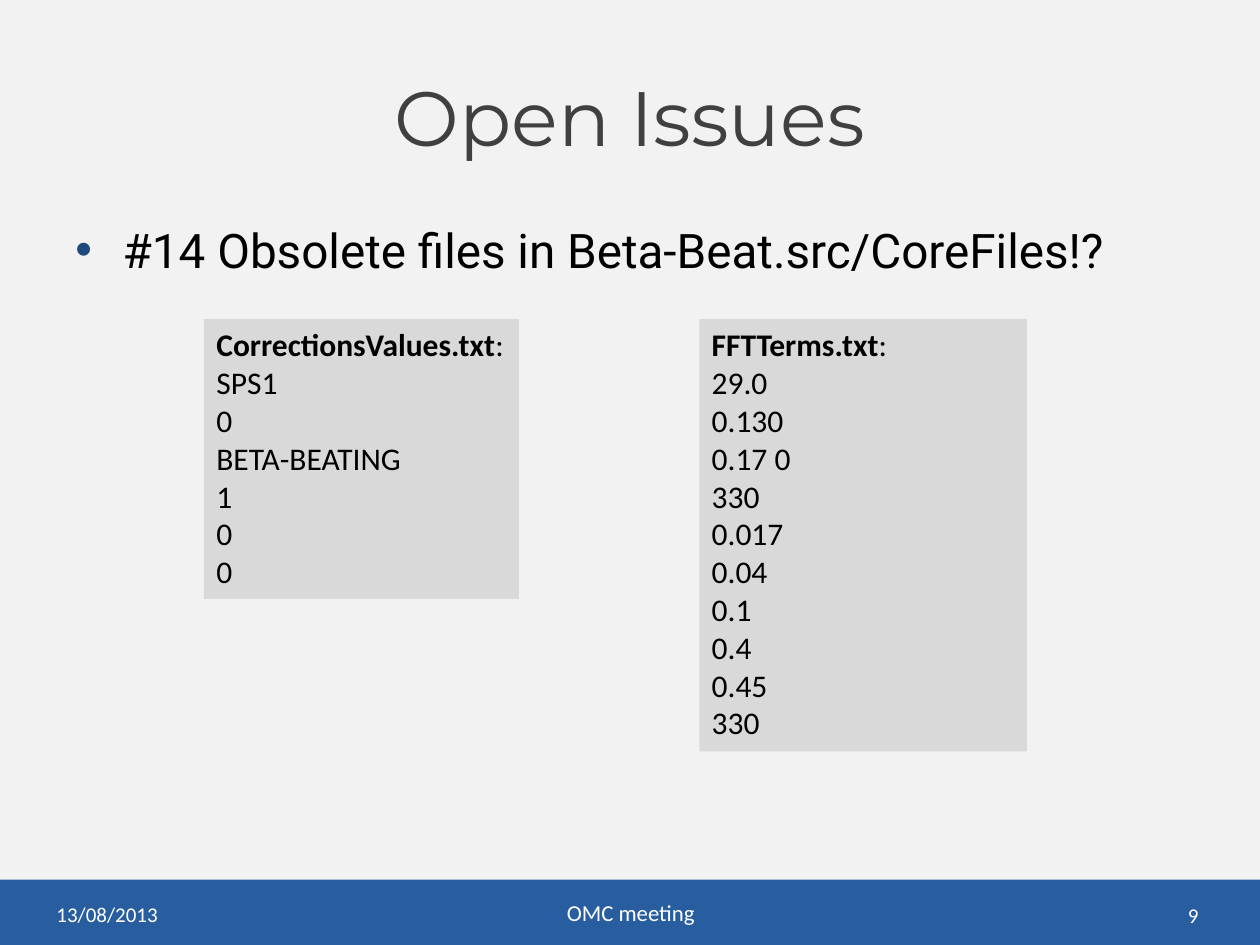
"""Build the Open Issues slide of the OMC meeting."""
from dataclasses import dataclass

from lxml.etree import SubElement
from pptx import Presentation
from pptx.dml.color import RGBColor
from pptx.enum.shapes import MSO_SHAPE
from pptx.enum.text import MSO_ANCHOR, MSO_AUTO_SIZE, PP_ALIGN
from pptx.oxml.ns import qn
from pptx.shapes.autoshape import Shape
from pptx.slide import Slide
from pptx.text.text import TextFrame, _Paragraph
from pptx.util import Pt


@dataclass(frozen=True)
class TextStyle:
    """Font name, size in points and colour."""
    name: str
    size: float
    color: str


@dataclass(frozen=True)
class Theme:
    """Colours and type styles of the slide."""
    footer_band: str = "285EA0"
    panel: str = "F2F2F2"
    listing: str = "D9D9D9"
    bullet: str = "1F497D"
    title: TextStyle = TextStyle("Montserrat", 44, "404040")
    issue: TextStyle = TextStyle("Roboto", 27.2, "000000")
    file: TextStyle = TextStyle("Calibri", 18, "000000")
    footer: TextStyle = TextStyle("Calibri", 12, "FFFFFF")
    meeting: TextStyle = TextStyle("Calibri", 13, "FFFFFF")


@dataclass(frozen=True)
class Box:
    """Position and size in points."""
    left: float
    top: float
    width: float
    height: float


@dataclass(frozen=True)
class FileListing:
    """A text file shown with its name and lines."""
    box: Box
    name: str
    lines: tuple[str, ...]
    wrap: bool


@dataclass(frozen=True)
class FooterItem:
    """One text in the footer band."""
    box: Box
    text: str
    style: TextStyle
    alignment: PP_ALIGN


THEME = Theme()
PANEL = Box(0, 0, 720, 502.6)
TITLE = Box(36, 20.9, 648, 90)
ISSUE = Box(36, 122.4, 648, 51.1)
INDENT = 27
LISTING_TOP = 182.4
LISTINGS = (
    FileListing(Box(116.6, LISTING_TOP, 180, 159.9), "CorrectionsValues.txt",
                ("SPS1", "0", "BETA-BEATING", "1", "0", "0"), False),
    FileListing(Box(399.6, LISTING_TOP, 187.2, 247), "FFTTerms.txt",
                ("29.0", "0.130", "0.17 0", "330", "0.017", "0.04", "0.1",
                 "0.4", "0.45", "330"), True),
)
FOOTER = (
    FooterItem(Box(25.2, 508, 167.8, 28.8), "13/08/2013", THEME.footer, PP_ALIGN.LEFT),
    FooterItem(Box(201.6, 508.3, 317.5, 26.6), "OMC meeting", THEME.meeting, PP_ALIGN.CENTER),
    FooterItem(Box(524.2, 508.3, 167.8, 28.8), "9", THEME.footer, PP_ALIGN.RIGHT),
)


def apply_format(target: object, values: dict[str, object]) -> None:
    """Set every named attribute on the target."""
    for name, value in values.items():
        setattr(target, name, value)


def place(box: Box) -> tuple[Pt, Pt, Pt, Pt]:
    """Return the box as left, top, width and height lengths."""
    return Pt(box.left), Pt(box.top), Pt(box.width), Pt(box.height)


def add_run(paragraph: _Paragraph, text: str, style: TextStyle, bold: bool = False) -> None:
    """Append a styled run to the paragraph."""
    run = paragraph.add_run()
    run.text = text
    apply_format(run.font, {"name": style.name, "size": Pt(style.size), "bold": bold})
    run.font.color.rgb = RGBColor.from_string(style.color)


def write_line(frame: TextFrame, text: str, style: TextStyle,
               alignment: PP_ALIGN, anchor: MSO_ANCHOR) -> _Paragraph:
    """Write one line into the frame and return its paragraph."""
    apply_format(frame, {"word_wrap": True, "auto_size": MSO_AUTO_SIZE.NONE,
                         "vertical_anchor": anchor})
    paragraph = frame.paragraphs[0]
    paragraph.alignment = alignment
    add_run(paragraph, text, style)
    return paragraph


def add_rectangle(slide: Slide, box: Box, color: str) -> Shape:
    """Add a flat rectangle without an outline."""
    shape = slide.shapes.add_shape(MSO_SHAPE.RECTANGLE, *place(box))
    shape.shadow.inherit = False
    shape.fill.solid()
    shape.fill.fore_color.rgb = RGBColor.from_string(color)
    shape.line.fill.background()
    return shape


def add_title(slide: Slide) -> None:
    """Fill and place the title placeholder."""
    title = slide.shapes.title
    left, top, width, height = place(TITLE)
    apply_format(title, {"left": left, "top": top, "width": width, "height": height})
    write_line(title.text_frame, "Open Issues", THEME.title, PP_ALIGN.CENTER, MSO_ANCHOR.MIDDLE)


def add_issue(slide: Slide) -> None:
    """Add the bulleted issue line."""
    frame = slide.shapes.add_textbox(*place(ISSUE)).text_frame
    paragraph = write_line(frame, "#14 Obsolete files in Beta-Beat.src/CoreFiles!?",
                           THEME.issue, PP_ALIGN.LEFT, MSO_ANCHOR.TOP)
    properties = paragraph._p.get_or_add_pPr()
    properties.set("marL", str(Pt(INDENT)))
    properties.set("indent", str(-Pt(INDENT)))
    color = SubElement(properties, qn("a:buClr"))
    SubElement(color, qn("a:srgbClr"), val=THEME.bullet)
    SubElement(properties, qn("a:buFont"), typeface="Arial")
    SubElement(properties, qn("a:buChar"), char="•")


def add_listing(slide: Slide, listing: FileListing) -> None:
    """Add a grey box with a file name and its lines."""
    frame = add_rectangle(slide, listing.box, THEME.listing).text_frame
    apply_format(frame, {"word_wrap": listing.wrap, "vertical_anchor": MSO_ANCHOR.TOP,
                         "auto_size": MSO_AUTO_SIZE.SHAPE_TO_FIT_TEXT})
    heading = frame.paragraphs[0]
    heading.alignment = PP_ALIGN.LEFT
    add_run(heading, listing.name, THEME.file, bold=True)
    add_run(heading, ":", THEME.file)
    for line in listing.lines:
        paragraph = frame.add_paragraph()
        paragraph.alignment = PP_ALIGN.LEFT
        add_run(paragraph, line, THEME.file)


def add_footer_item(slide: Slide, item: FooterItem) -> None:
    """Add one text to the footer band."""
    frame = slide.shapes.add_textbox(*place(item.box)).text_frame
    write_line(frame, item.text, item.style, item.alignment, MSO_ANCHOR.MIDDLE)


def main() -> None:
    """Build and save the presentation."""
    presentation = Presentation()
    apply_format(presentation, {"slide_width": Pt(720), "slide_height": Pt(540)})
    slide = presentation.slides.add_slide(presentation.slide_layouts[5])
    slide.background.fill.solid()
    slide.background.fill.fore_color.rgb = RGBColor.from_string(THEME.footer_band)
    panel = add_rectangle(slide, PANEL, THEME.panel)
    slide.shapes.title.element.addprevious(panel.element)
    add_title(slide)
    add_issue(slide)
    for item in FOOTER:
        add_footer_item(slide, item)
    for listing in LISTINGS:
        add_listing(slide, listing)
    presentation.save("out.pptx")


if __name__ == "__main__":
    main()
